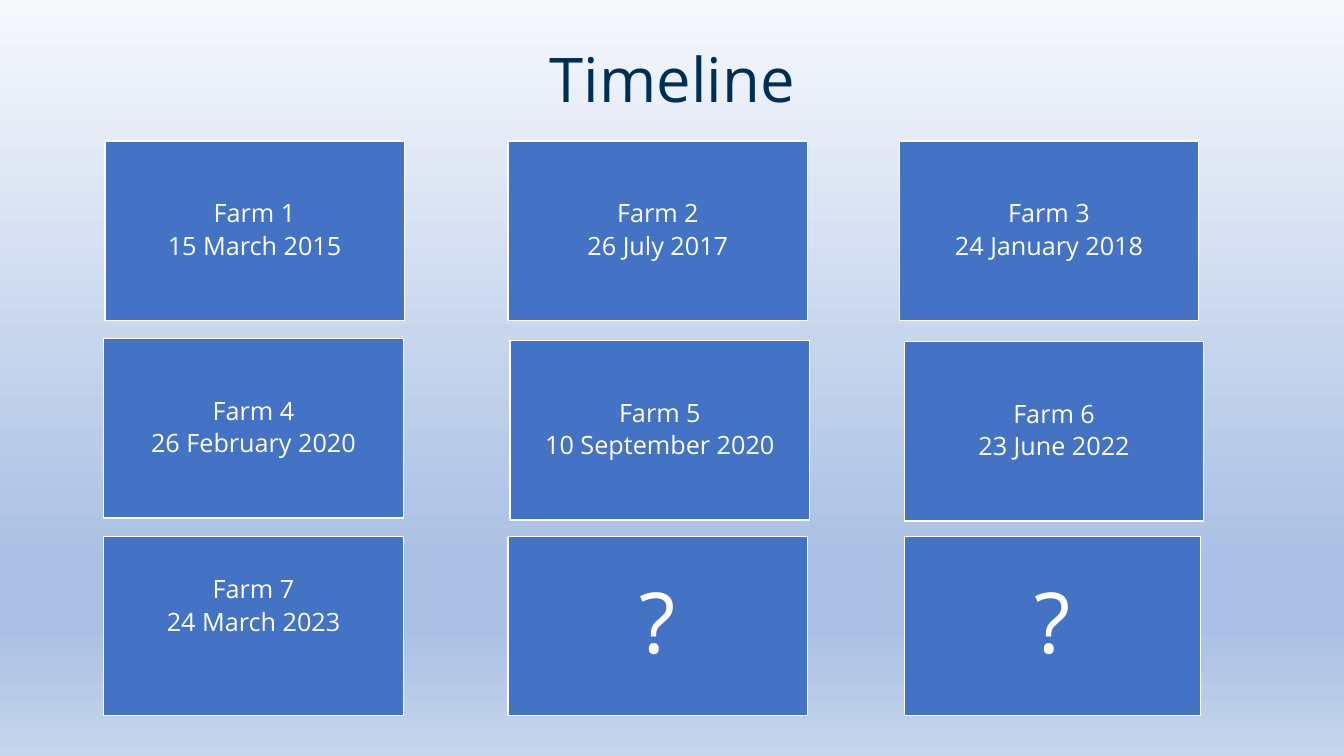
"""Build the farm timeline slide."""
from lxml.etree import SubElement
from pptx import Presentation
from pptx.dml.color import RGBColor
from pptx.enum.shapes import MSO_SHAPE
from pptx.enum.text import MSO_ANCHOR, PP_ALIGN
from pptx.oxml.ns import qn
from pptx.util import Inches, Pt

COLORS = {"navy": "002F55", "blue": "4472C4", "white": "FFFFFF"}
STOPS = [(0, "F6F8FC"), (74, "ABC0E4"), (83, "ABC0E4"), (100, "C7D5ED")]
WIDE, HIGH = 2.97, 1.78
CARDS = [
    (1.04, 1.4, WIDE, ["Farm 1", "15 March 2015"]),
    (5.04, 1.4, WIDE, ["Farm 2", "26 July 2017"]),
    (8.92, 1.4, WIDE, ["Farm 3", "24 January 2018"]),
    (1.03, 3.36, WIDE, ["Farm 4", "26 February 2020"]),
    (5.06, 3.38, WIDE, ["Farm 5", "10 September 2020"]),
    (8.97, 3.39, WIDE, ["Farm 6", "23 June 2022"]),
    (1.03, 5.32, WIDE, ["Farm 7", "24 March 2023"]),
    (5.04, 5.32, WIDE, ["?"]),
    (8.97, 5.32, 2.94, ["?"]),
]


class Deck:
    def __init__(self, slide):
        self.slide = slide
        self.font = "Open Sans"

    def color(self, name):
        return RGBColor.from_string(COLORS[name])

    def backdrop(self, stops):
        fill = self.slide.background.fill
        fill.gradient()
        fill.gradient_angle = 270
        group = next(self.slide.element.iter(qn("a:gsLst")))
        for old in list(group):
            group.remove(old)
        for place, tone in stops:
            stop = SubElement(group, qn("a:gs"), pos=str(place * 1000))
            SubElement(stop, qn("a:srgbClr"), val=tone)

    def label(self, shape, lines, size, tone, insets):
        frame = shape.text_frame
        frame.text = "\n".join(lines)
        style = {"word_wrap": True, "vertical_anchor": MSO_ANCHOR.MIDDLE}
        for side, inset in insets.items():
            style["margin_" + side] = Inches(inset)
        for key, value in style.items():
            setattr(frame, key, value)
        para = {"alignment": PP_ALIGN.CENTER, "line_spacing": 0.9, "space_after": Pt(3.7)}
        face = {"name": self.font, "size": Pt(size)}
        for line in frame.paragraphs:
            for key, value in para.items():
                setattr(line, key, value)
            for key, value in face.items():
                setattr(line.font, key, value)
            line.font.color.rgb = self.color(tone)

    def title(self, text, *box):
        shape = self.slide.shapes.add_textbox(*map(Inches, box))
        self.label(shape, [text], 44, "navy", {})

    def card(self, left, top, width, lines):
        box = map(Inches, (left, top, width, HIGH))
        shape = self.slide.shapes.add_shape(MSO_SHAPE.RECTANGLE, *box)
        shape.shadow.inherit = False
        shape.fill.solid()
        shape.fill.fore_color.rgb = self.color("blue")
        shape.line.color.rgb = self.color("white")
        shape.line.width = Pt(1)
        size, inset = (60, 0.25) if lines == ["?"] else (18, 0.07)
        insets = dict.fromkeys(("left", "top", "right", "bottom"), inset)
        if lines[0] == "Farm 7":
            insets["bottom"] = 0.45
        self.label(shape, lines, size, "white", insets)


def main():
    show = Presentation()
    show.slide_width, show.slide_height = Inches(13.33), Inches(7.5)
    deck = Deck(show.slides.add_slide(show.slide_layouts[6]))
    deck.backdrop(STOPS)
    deck.title("Timeline", 0.92, 0.23, 11.5, 1.17)
    for card in CARDS:
        deck.card(*card)
    show.save("out.pptx")


if __name__ == "__main__":
    main()
